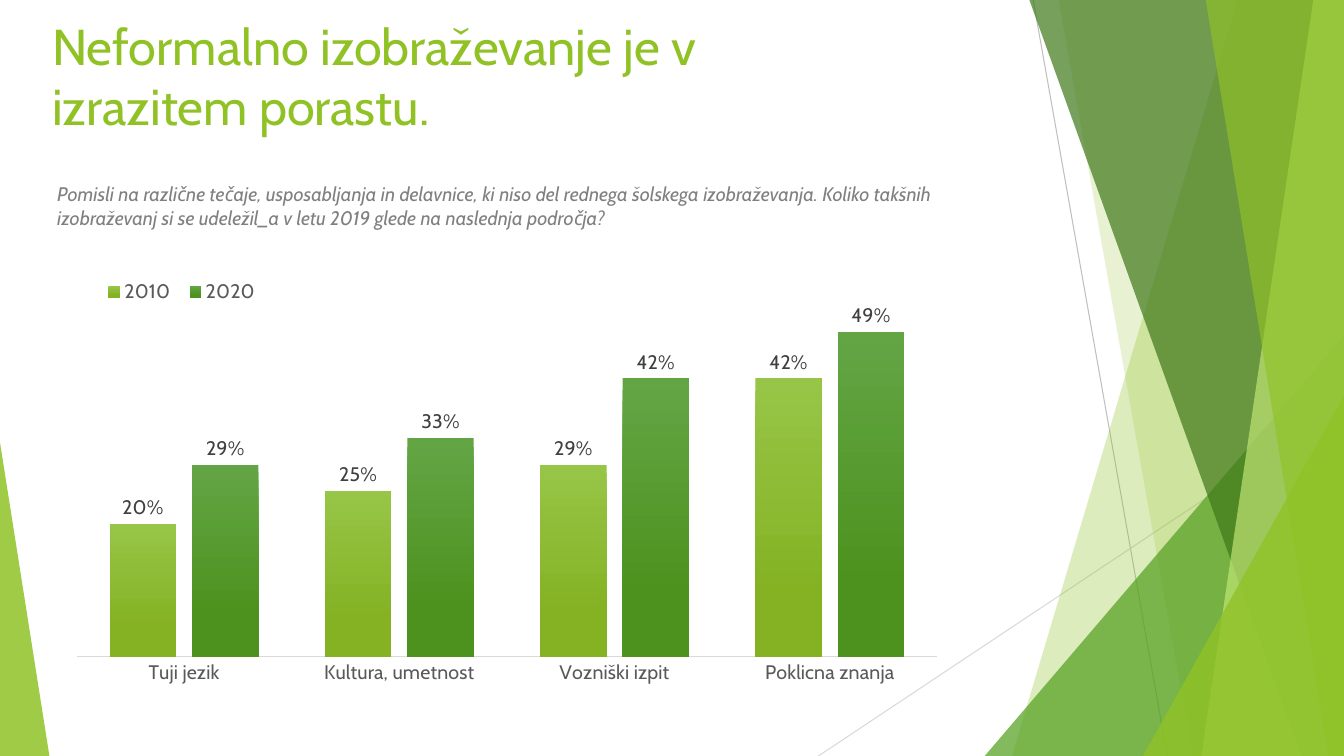
import pptx
import pptx.chart.data
import pptx.dml.color
import pptx.enum.chart
import pptx.enum.shapes
import pptx.oxml.ns
import pptx.oxml.xmlchemy
import pptx.util

Pt = pptx.util.Pt
qn = pptx.oxml.ns.qn
make = pptx.oxml.xmlchemy.OxmlElement

# Content
WIDE, HIGH = 960, 540
FONT = "Cabin"
TITLE = "Neformalno izobraževanje je v izrazitem porastu."
ASK = ("Pomisli na različne tečaje, usposabljanja in delavnice, ki niso del "
       "rednega šolskega izobraževanja. Koliko takšnih izobraževanj si se "
       "udeležil_a v letu 2019 glede na naslednja področja?")
AREAS = ["Tuji jezik", "Kultura, umetnost", "Vozniški izpit", "Poklicna znanja"]
YEARS = [  # name, values, top colour, bottom colour
    ("2010", (0.20, 0.25, 0.29, 0.42), "97C547", "84B223"),
    ("2020", (0.29, 0.33, 0.42, 0.49), "63A545", "4D921E"),
]
TEXTS = [  # text, box, size, colour, italic
    (TITLE, (30.2, 7.2, 614.9, 103.7), 36, "90C226", False),
    (ASK, (33.8, 126.7, 685.4, 41), 14, "808080", True),
]
LINES = [  # start, end, colour
    ((738, 0), (833.8, HIGH), "BFBFBF"),
    ((WIDE, 290.2), (584.6, HIGH), "D9D9D9"),
]
# Bands: x at top, x at bottom. Wedges: left, top, right, apex (0 left, 1 right)
DECOR = [
    ("band", (884.2, 722.9), "90C226", 30),
    ("band", (756, 851.8), "90C226", 20),
    ("wedge", (703.4, 239.8, WIDE, 1), "54A021", 72),
    ("band", (735.1, 929.5), "3F7819", 70),
    ("band", (938.2, 858.2), "C0E474", 70),
    ("band", (861.1, 949), "90C226", 65),
    ("wedge", (816.5, 283, WIDE, 1), "90C226", 80),
    ("wedge", (0, 316.1, 35.3, 0), "90C226", 85),
]
CHART = (0, 168.5, 683.3, 334.1)
PLOT = (0.08, 0.05, 0.9, 0.85)
KEY = (0.1, 0.08, 0.18, 0.08)


def tint(color, code):
    color.rgb = pptx.dml.color.RGBColor.from_string(code)


def style(font, size, code):
    font.name, font.size = FONT, Pt(size)
    tint(font.color, code)


def place(parent, index, box, inner=False):
    """Give a chart part a fixed place, in fractions of the chart."""
    for old in parent.findall(qn("c:layout")):
        parent.remove(old)
    layout = make("c:layout")
    manual = make("c:manualLayout")
    layout.append(manual)
    rules = [("layoutTarget", "inner")] if inner else []
    rules += [("xMode", "edge"), ("yMode", "edge"), *zip("xywh", box)]
    for name, value in rules:
        item = make("c:" + name)
        item.set("val", str(value))
        manual.append(item)
    parent.insert(index, layout)


deck = pptx.Presentation()
deck.slide_width, deck.slide_height = Pt(WIDE), Pt(HIGH)
shapes = deck.slides.add_slide(deck.slide_layouts[6]).shapes

# Thin lines
for start, end, code in LINES:
    line = shapes.add_connector(pptx.enum.shapes.MSO_CONNECTOR.STRAIGHT,
                                *map(Pt, start + end))
    line.line.width = Pt(0.75)
    tint(line.line.color, code)
    line._element.spPr.append(make("a:effectLst"))

# Translucent bands and wedges
for kind, spot, code, alpha in DECOR:
    if kind == "band":
        top, foot = spot
        band = shapes.build_freeform(Pt(top), Pt(-0.6), 1)
        band.add_line_segments([(Pt(x), Pt(y)) for x, y in (
            (WIDE, -0.6), (WIDE, HIGH), (foot, HIGH))])
        shape = band.convert_to_shape()
    else:
        left, top, right, apex = spot
        shape = shapes.add_shape(
            pptx.enum.shapes.MSO_SHAPE.ISOSCELES_TRIANGLE,
            *map(Pt, (left, top, right - left, HIGH - top)))
        shape.adjustments[0] = apex
    shape.shadow.inherit = False
    shape.line.fill.background()
    shape.fill.solid()
    tint(shape.fill.fore_color, code)
    clear = make("a:alpha")
    clear.set("val", str(alpha * 1000))
    shape._element.spPr.find(".//" + qn("a:srgbClr")).append(clear)

# Title and question
for text, box, size, code, slant in TEXTS:
    frame = shapes.add_textbox(*map(Pt, box)).text_frame
    frame.word_wrap = True
    frame.text = text
    font = frame.paragraphs[0].runs[0].font
    style(font, size, code)
    font.italic = slant

# Chart
data = pptx.chart.data.CategoryChartData(number_format="0%")
data.categories = AREAS
for name, values, *_ in YEARS:
    data.add_series(name, values)
chart = shapes.add_chart(pptx.enum.chart.XL_CHART_TYPE.COLUMN_CLUSTERED,
                         *map(Pt, CHART), data).chart
style(chart.font, 14, "000000")
chart.has_title = False

# Axes
none = pptx.enum.chart.XL_TICK_MARK.NONE
axis = chart.category_axis
axis.major_tick_mark = axis.minor_tick_mark = none
style(axis.tick_labels.font, 14, "595959")
axis.format.line.width = Pt(1)
tint(axis.format.line.color, "D9D9D9")
scale = chart.value_axis
scale.minimum_scale, scale.maximum_scale = 0, 0.6
scale.has_major_gridlines = False
scale.visible = False

# Legend and plot area
chart.has_legend = True
key = chart.legend
key.position = pptx.enum.chart.XL_LEGEND_POSITION.BOTTOM
key.include_in_layout = False
style(key.font, 14, "595959")
place(key._element, 1, KEY)
place(chart._chartSpace.chart.plotArea, 0, PLOT, inner=True)

# Columns
plot = chart.plots[0]
plot.gap_width, plot.overlap = 100, -24
plot.vary_by_categories = False
for series, (_, _, light, dark) in zip(plot.series, YEARS):
    fill = series.format.fill
    fill.gradient()
    fill.gradient_angle = 270
    for stop, spot, code in zip(fill.gradient_stops, (0, 0.78), (light, dark)):
        stop.position = spot
        tint(stop.color, code)
    labels = series.data_labels
    labels.show_value = True
    labels.position = pptx.enum.chart.XL_LABEL_POSITION.OUTSIDE_END
    labels.number_format, labels.number_format_is_linked = "0%", False
    style(labels.font, 14, "404040")

deck.save("out.pptx")
